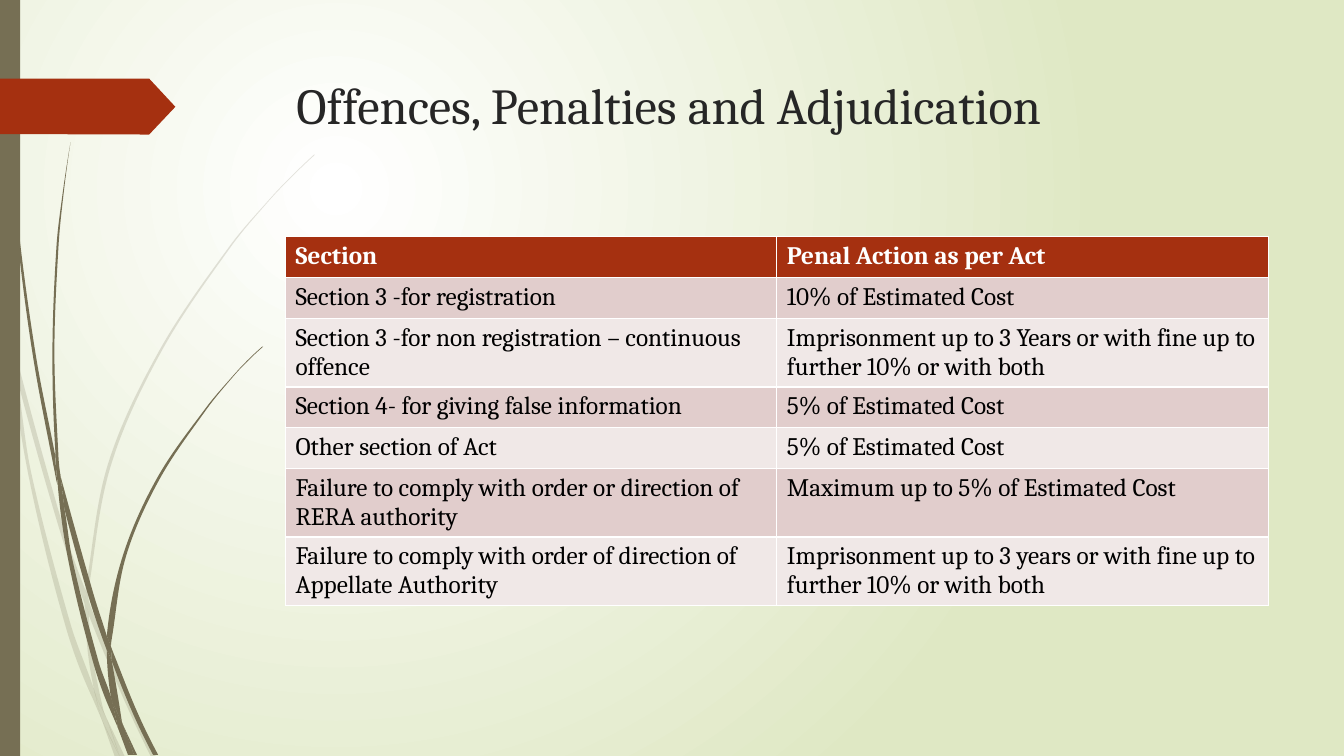
import dataclasses
import math

import lxml.etree
import pptx
import pptx.dml.color
import pptx.enum.text
import pptx.enum.shapes
import pptx.oxml.ns
import pptx.util


@dataclasses.dataclass(frozen=True)
class Theme:
    accent: str = "A53010"
    grass: str = "766F54"
    light: str = "FFFFFF"
    backdrop: str = "DFE8C4"
    title: str = "262626"
    text: str = "000000"
    bands: tuple = ("E1CDCC", "F0E8E7")
    font: str = "Cambria"
    title_size: float = 36
    table_size: float = 18


# Outlines lie on a fine grid; each blade has an outward and a return edge
GRID = 0.72  # points
FADED_BLADES = [
    ([(11, 350), (9, 322), (0, 282)], [(0, 299), (10, 344), (11, 350)]),
    ([(17, 376), (58, 522), (84, 599)], [(85, 586), (62, 520), (14, 345)]),
    ([(88, 596), (92, 607), (127, 692), (155, 751)], [(150, 751), (123, 694), (88, 610)]),
    ([(105, 711), (119, 751)], [(124, 751), (105, 711)]),
    ([(11, 350), (17, 376), (31, 469), (70, 619), (93, 683), (99, 707), (101, 714)],
     [(92, 693), (65, 621), (28, 470), (11, 350)]),
    ([(84, 599), (87, 646), (93, 683), (96, 692), (105, 711)],
     [(103, 706), (91, 646), (88, 610), (88, 608), (84, 599)]),
    ([(88, 596), (88, 584), (110, 462), (160, 349), (229, 245), (268, 198), (290, 175),
      (312, 154)],
     [(312, 153), (289, 175), (268, 197), (228, 244), (158, 348), (107, 461), (85, 584),
      (85, 586)]),
    ([(101, 714), (114, 751)], [(119, 751), (101, 714)]),
    ([(84, 599), (88, 608), (88, 610)], [(88, 596), (85, 586)]),
    ([(93, 683), (99, 707), (101, 714), (119, 751)],
     [(119, 751), (105, 711), (96, 692), (93, 683)]),
]
SOLID_BLADES = [
    ([(3, 0), (4, 48), (7, 110), (17, 233), (33, 355), (56, 477), (57, 481)],
     [(55, 457), (55, 453), (36, 355), (19, 232), (8, 109), (5, 48), (4, 0)]),
    ([(64, 505), (88, 592), (106, 645)], [(106, 633), (106, 631), (93, 590), (60, 472)]),
    ([(110, 641), (113, 649), (136, 706), (157, 749)], [(152, 749), (132, 708), (111, 656)]),
    ([(57, 477), (64, 505), (72, 556), (98, 657), (110, 691), (116, 717), (117, 722)],
     [(111, 708), (93, 659), (68, 557), (57, 477)]),
    ([(60, 472), (58, 453), (54, 349), (58, 245), (63, 193), (70, 141)],
     [(70, 141), (62, 193), (56, 245), (52, 349), (55, 449), (60, 472)]),
    ([(122, 719), (133, 749)], [(136, 749), (122, 719)]),
    ([(55, 449), (55, 453), (57, 477), (64, 505)], [(60, 472), (55, 449)]),
    ([(110, 641), (111, 633), (125, 552), (158, 476), (205, 406), (231, 374), (245, 359),
      (261, 344)],
     [(260, 344), (245, 358), (231, 373), (204, 405), (156, 474), (122, 551), (106, 631)]),
    ([(117, 722), (127, 749)], [(131, 749), (117, 722)]),
    ([(106, 645), (110, 691), (116, 706), (122, 719)],
     [(121, 716), (111, 656), (109, 651), (106, 645)]),
    ([(106, 645), (109, 651), (111, 656)], [(110, 641), (106, 631), (106, 633)]),
    ([(110, 691), (116, 717), (117, 722), (130, 749)],
     [(133, 749), (122, 719), (116, 706), (110, 691)]),
]
ARROW_TAB = [(0, 78), (148, 78), (174, 106), (148, 133.5), (0, 133)]
PENALTIES = [
    ("Section", "Penal Action as per Act"),
    ("Section 3 -for registration", "10% of Estimated Cost"),
    ("Section 3 -for non registration – continuous offence",
     "Imprisonment up to 3 Years or with fine up to further 10% or with both"),
    ("Section 4- for giving false information", "5% of Estimated Cost"),
    ("Other section of Act", "5% of Estimated Cost"),
    ("Failure to comply with order or direction of RERA authority",
     "Maximum up to 5% of Estimated Cost"),
    ("Failure to comply with order of direction of Appellate Authority",
     "Imprisonment up to 3 years or with fine up to further 10% or with both"),
]


def rgb(value):
    return pptx.dml.color.RGBColor.from_string(value)


def add_child(parent, tag, **attributes):
    return lxml.etree.SubElement(parent, pptx.oxml.ns.qn(tag), attributes)


def direction(start, end):
    length = math.dist(start, end) or 1
    return [(b - a) / length for a, b in zip(start, end)]


def curve_segments(edge):
    """Bezier control points and end point for each step along an edge."""
    chords = [direction(a, b) for a, b in zip(edge, edge[1:])]
    inner = [direction(a, c) for a, c in zip(edge, edge[2:])]
    if inner:
        first = [2 * c - t for c, t in zip(chords[0], inner[0])]
        last = [2 * c - t for c, t in zip(chords[-1], inner[-1])]
    else:
        first = last = chords[0]
    tangents = [first, *inner, last]
    for a, b, leave, arrive in zip(edge, edge[1:], tangents, tangents[1:]):
        reach = math.dist(a, b) / 3
        yield ([p + reach * t for p, t in zip(a, leave)],
               [p - reach * t for p, t in zip(b, arrive)], b)


class SlideBuilder:
    def __init__(self, slide, theme):
        self.slide = slide
        self.theme = theme

    def background(self):
        fill = self.slide.background.fill
        fill.gradient()
        for stop, color in zip(fill.gradient_stops, (self.theme.light, self.theme.backdrop)):
            stop.color.rgb = rgb(color)
        gradient = next(self.slide.element.iter(pptx.oxml.ns.qn("a:gradFill")))
        gradient.remove(gradient.find(pptx.oxml.ns.qn("a:lin")))
        circle = add_child(gradient, "a:path", path="circle")
        add_child(circle, "a:fillToRect", l="50000", t="50000", r="100000", b="100000")

    def paint(self, shape, color, opacity=100):
        shape.shadow.inherit = False
        shape.line.fill.background()
        shape.fill.solid()
        shape.fill.fore_color.rgb = rgb(color)
        if opacity < 100:
            solid = next(shape.element.spPr.iter(pptx.oxml.ns.qn("a:srgbClr")))
            add_child(solid, "a:alpha", val=str(opacity * 1000))

    def outline(self, points, color, opacity=100):
        points = [[pptx.util.Pt(GRID * value) for value in point] for point in points]
        builder = self.slide.shapes.build_freeform(*points[0])
        builder.add_line_segments(points[1:], close=True)
        shape = builder.convert_to_shape()
        self.paint(shape, color, opacity)
        return shape

    def blade(self, outward, back, opacity):
        shape = self.outline(outward + back, self.theme.grass, opacity)
        lines = list(shape.element.iter(pptx.oxml.ns.qn("a:lnTo")))
        bends = [*curve_segments(outward), None, *curve_segments(back)]
        for line, bend in zip(lines, bends):
            if bend is None:
                continue
            curve = lxml.etree.Element(pptx.oxml.ns.qn("a:cubicBezTo"))
            for x, y in bend:
                add_child(curve, "a:pt", x=str(pptx.util.Pt(GRID * x) - shape.left),
                          y=str(pptx.util.Pt(GRID * y) - shape.top))
            line.getparent().replace(line, curve)

    def bar(self, box):
        kind = pptx.enum.shapes.MSO_SHAPE.RECTANGLE
        self.paint(self.slide.shapes.add_shape(kind, *map(pptx.util.Pt, box)), self.theme.grass)

    def format_text(self, paragraph, size, color, bold=False):
        formats = {"name": self.theme.font, "size": pptx.util.Pt(size), "bold": bold}
        for run in paragraph.runs:
            for name, value in formats.items():
                setattr(run.font, name, value)
            run.font.color.rgb = rgb(color)

    def title(self, text, box):
        shape = self.slide.shapes.title
        for name, value in zip(("left", "top", "width", "height"), box):
            setattr(shape, name, pptx.util.Pt(value))
        frame = shape.text_frame
        frame.text = text
        frame.vertical_anchor = pptx.enum.text.MSO_ANCHOR.TOP
        frame.paragraphs[0].alignment = pptx.enum.text.PP_ALIGN.LEFT
        self.format_text(frame.paragraphs[0], self.theme.title_size, self.theme.title)

    def table(self, rows, box):
        theme = self.theme
        frame = self.slide.shapes.add_table(len(rows), len(rows[0]), *map(pptx.util.Pt, box))
        for row_index, row in enumerate(rows):
            header = row_index == 0
            fill = theme.accent if header else theme.bands[(row_index - 1) % 2]
            for column_index, text in enumerate(row):
                cell = frame.table.cell(row_index, column_index)
                cell.text = text
                cell.fill.solid()
                cell.fill.fore_color.rgb = rgb(fill)
                self.format_text(cell.text_frame.paragraphs[0], theme.table_size,
                                 theme.light if header else theme.text, header)


def main():
    presentation = pptx.Presentation()
    presentation.slide_width = pptx.util.Pt(960)
    presentation.slide_height = pptx.util.Pt(540)
    theme = Theme()
    builder = SlideBuilder(presentation.slides.add_slide(presentation.slide_layouts[5]), theme)
    # Backdrop, grass, side bar and arrow tab
    builder.background()
    for blades, opacity in ((FADED_BLADES, 20), (SOLID_BLADES, 100)):
        for outward, back in blades:
            builder.blade(outward, back, opacity)
    builder.bar((0, 0, 14.4, 540))
    builder.outline(ARROW_TAB, theme.accent)
    # Title and table of penalties
    builder.title("Offences, Penalties and Adjudication", (204.5, 49, 702, 100.8))
    builder.table(PENALTIES, (203.9, 169.2, 702, 29.2 * len(PENALTIES)))
    presentation.save("out.pptx")


if __name__ == "__main__":
    main()
